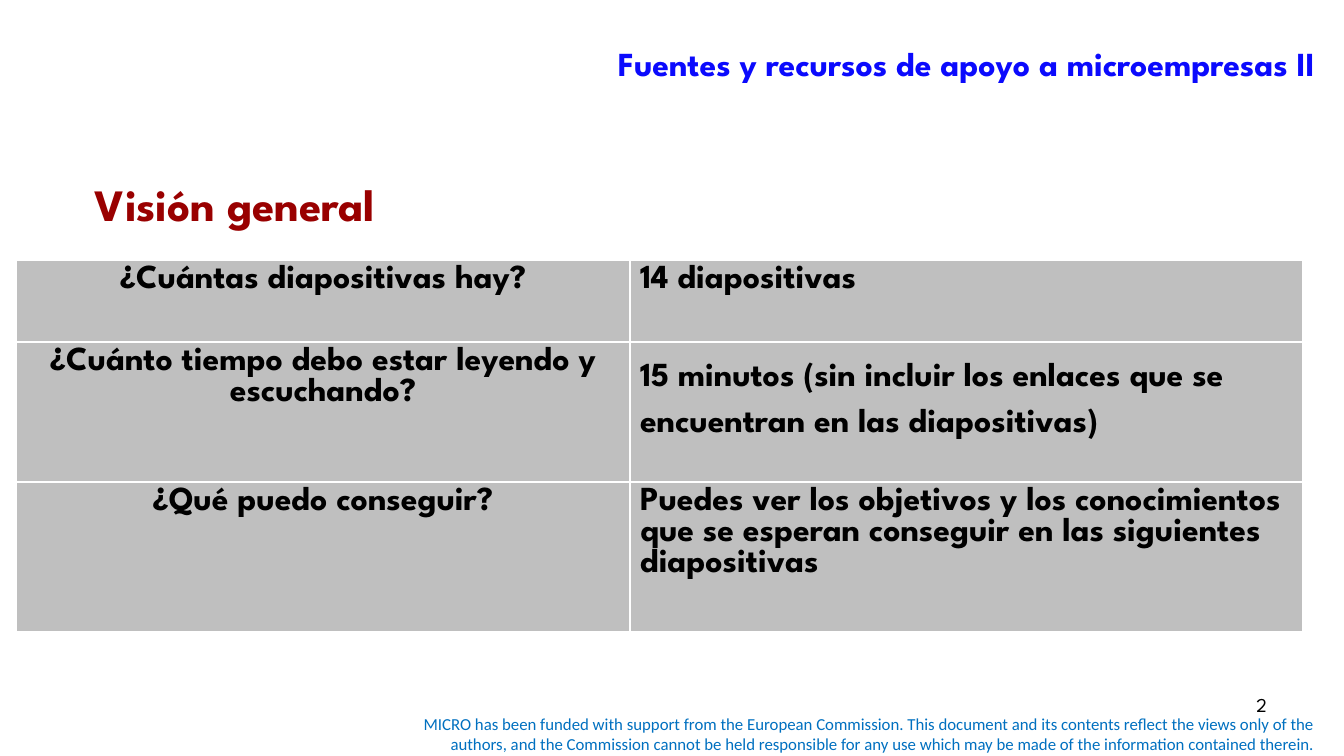
"""Builds the overview slide of a course on support for microenterprises."""
from lxml.etree import SubElement
from pptx import Presentation
from pptx.dml.color import RGBColor
from pptx.enum.text import MSO_ANCHOR as Anchor, PP_ALIGN as Align
from pptx.oxml.ns import qn
from pptx.util import Pt

SCALE = 914400 / 100.8
FACE = "League Spartan"


def px(*sizes):
    """Turn pixel lengths into EMU."""
    return [round(size * SCALE) for size in sizes]


def write(frame, text, align, hue, **font):
    """Fill a text frame with one formatted paragraph."""
    frame.word_wrap = True
    para = frame.paragraphs[0]
    para.alignment = align
    run = para.add_run()
    run.text = text
    run.font.color.rgb = RGBColor.from_string(hue)
    for name, value in font.items():
        setattr(run.font, name, value)
    return para


deck = Presentation()
deck.slide_width, deck.slide_height = px(1344, 756)
slide = deck.slides.add_slide(deck.slide_layouts[5])
shapes = slide.shapes

title = shapes.title
title.left, title.top, title.width, title.height = px(115, 0, 1210, 126)
title.text_frame.vertical_anchor = Anchor.MIDDLE
write(title.text_frame, "Fuentes y recursos de apoyo a microempresas II",
      Align.RIGHT, "0B0AFD", name=FACE, size=Pt(24), bold=True)

notice = (
    "MICRO has been funded with support from the European Commission. "
    "This document and its contents reflect the views only of the authors, "
    "and the Commission cannot be held responsible for any use which may be "
    "made of the information contained therein."
)
labels = [
    (notice, (378, 709, 947, 50), Align.RIGHT, Anchor.MIDDLE, "0070C0",
     dict(name="Calibri", size=Pt(12))),
    ("2", (964, 688, 313, 52), Align.RIGHT, Anchor.TOP, "000000",
     dict(name=FACE, size=Pt(14))),
    ("Visión general", (85, 172, 422, 65), Align.LEFT, Anchor.TOP, "990000",
     dict(name=FACE, size=Pt(32), bold=True)),
]
for text, place, align, anchor, hue, font in labels:
    frame = shapes.add_textbox(*px(*place)).text_frame
    frame.vertical_anchor = anchor
    write(frame, text, align, hue, **font)

rows = [
    (82, "¿Cuántas diapositivas hay?", "14 diapositivas", 1),
    (140, "¿Cuánto tiempo debo estar leyendo y escuchando?",
     "15 minutos (sin incluir los enlaces que se encuentran en las diapositivas)", 1.5),
    (150, "¿Qué puedo conseguir?",
     "Puedes ver los objetivos y los conocimientos que se esperan conseguir "
     "en las siguientes diapositivas", 1),
]
table = shapes.add_table(len(rows), 2, *px(16, 260, 1287, 372)).table
table.first_row = table.horz_banding = False
for col, width in zip(table.columns, px(614, 673)):
    col.width = width
for i, (height, ask, reply, gap) in enumerate(rows):
    table.rows[i].height = px(height)[0]
    for j, (text, align, space) in enumerate([(ask, Align.CENTER, 1),
                                              (reply, Align.LEFT, gap)]):
        cell = table.cell(i, j)
        props = cell._tc.get_or_add_tcPr()
        for side in ("lnL", "lnR", "lnT", "lnB"):
            line = SubElement(props, qn(f"a:{side}"), w=str(Pt(1)))
            SubElement(SubElement(line, qn("a:solidFill")), qn("a:srgbClr"), val="FFFFFF")
        cell.fill.solid()
        cell.fill.fore_color.rgb = RGBColor.from_string("BFBFBF")
        para = write(cell.text_frame, text, align, "000000",
                     name=FACE, size=Pt(24), bold=True)
        para.line_spacing = space

deck.save("out.pptx")
